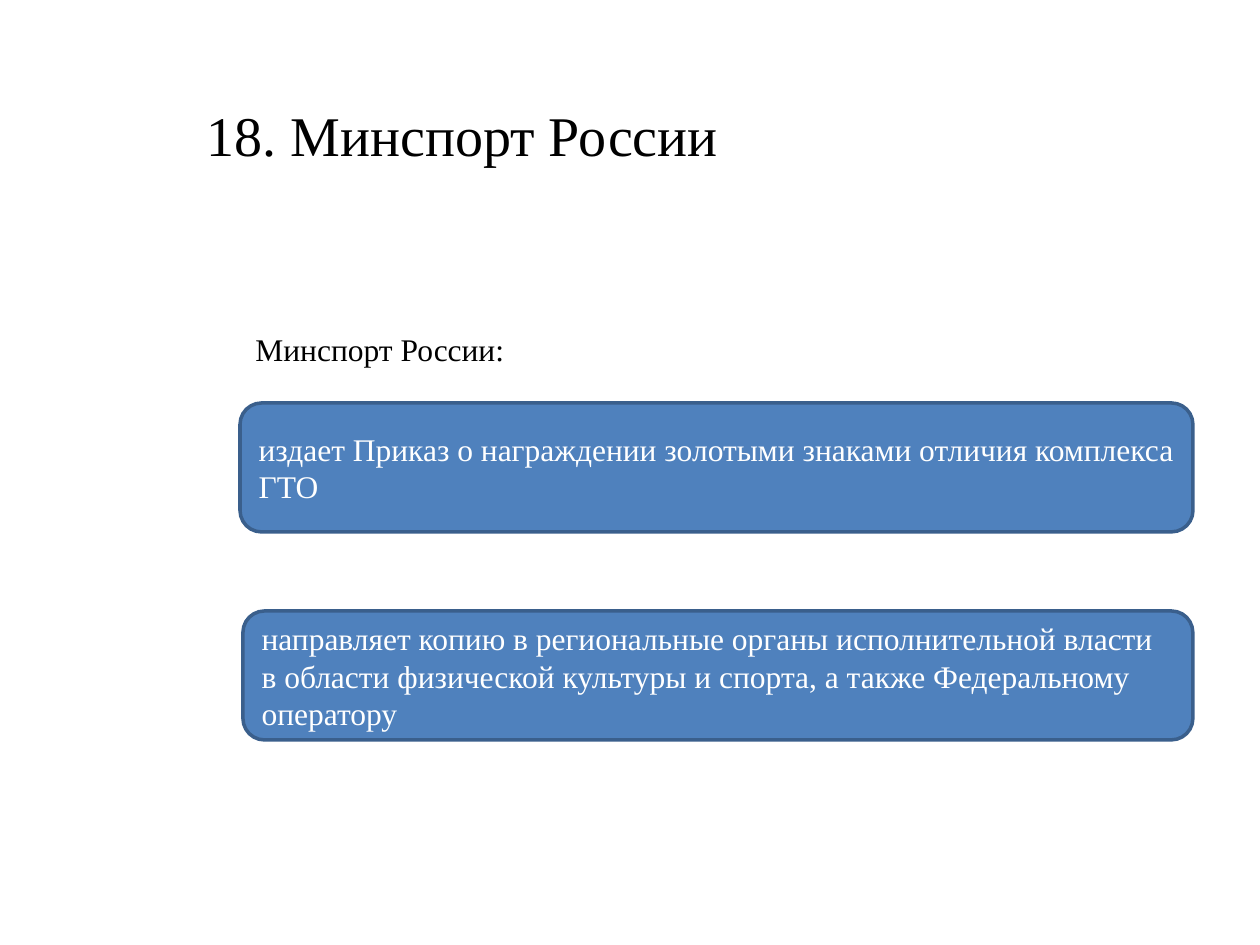
from dataclasses import dataclass

from pptx import Presentation
from pptx.dml.color import RGBColor
from pptx.enum.shapes import MSO_SHAPE
from pptx.enum.text import MSO_ANCHOR, MSO_AUTO_SIZE, PP_ALIGN
from pptx.util import Pt

ROUNDED = MSO_SHAPE.ROUNDED_RECTANGLE
MIDDLE, TOP = MSO_ANCHOR.MIDDLE, MSO_ANCHOR.TOP
NO_FIT = MSO_AUTO_SIZE.NONE
LEFT = PP_ALIGN.LEFT
EMU_PER_PX = 914400 // 126
TITLE_ONLY = 5


@dataclass(frozen=True)
class Theme:
    font: str = "Times New Roman"
    text: RGBColor = RGBColor(0, 0, 0)
    inverse: RGBColor = RGBColor(255, 255, 255)
    fill: RGBColor = RGBColor(0x4F, 0x81, 0xBD)
    line: RGBColor = RGBColor(0x3A, 0x5F, 0x8C)
    title_size: int = 32
    body_size: int = 18
    line_width: int = 2


THEME = Theme()


def px(value):
    return value * EMU_PER_PX


def box(*lengths):
    return [px(v) for v in lengths]


def write(shape, text, size, color, anchor):
    tf = shape.text_frame
    tf.word_wrap = True
    tf.auto_size = NO_FIT
    tf.vertical_anchor = anchor
    p = tf.paragraphs[0]
    p.alignment = LEFT
    r = p.add_run()
    r.text = text
    r.font.name = THEME.font
    r.font.size = Pt(size)
    r.font.color.rgb = color


def set_title(s, text, left, top, width, height):
    title = s.shapes.title
    title.left, title.top, title.width, title.height = box(left, top, width, height)
    write(title, text, THEME.title_size, THEME.text, MIDDLE)


def add_label(s, text, left, top, width, height):
    label = s.shapes.add_textbox(*box(left, top, width, height))
    write(label, text, THEME.body_size, THEME.text, TOP)


def add_card(s, text, left, top, width, height):
    card = s.shapes.add_shape(ROUNDED, *box(left, top, width, height))
    card.shadow.inherit = False
    card.fill.solid()
    card.fill.fore_color.rgb = THEME.fill
    card.line.color.rgb = THEME.line
    card.line.width = Pt(THEME.line_width)
    write(card, text, THEME.body_size, THEME.inverse, MIDDLE)


def main():
    prs = Presentation()
    prs.slide_width, prs.slide_height = box(1260, 945)
    s = prs.slides.add_slide(prs.slide_layouts[TITLE_ONLY])
    set_title(s, "18. Минспорт России", 194, 55, 984, 158)
    add_label(s, "Минспорт России:", 243, 324, 753, 50)
    add_card(s, "издает Приказ о награждении золотыми знаками отличия комплекса ГТО",
             240, 403, 953, 129)
    add_card(s, "направляет копию в региональные органы исполнительной власти "
                "в области физической культуры и спорта, а также Федеральному оператору",
             243, 611, 950, 129)
    prs.save("out.pptx")


if __name__ == "__main__":
    main()
